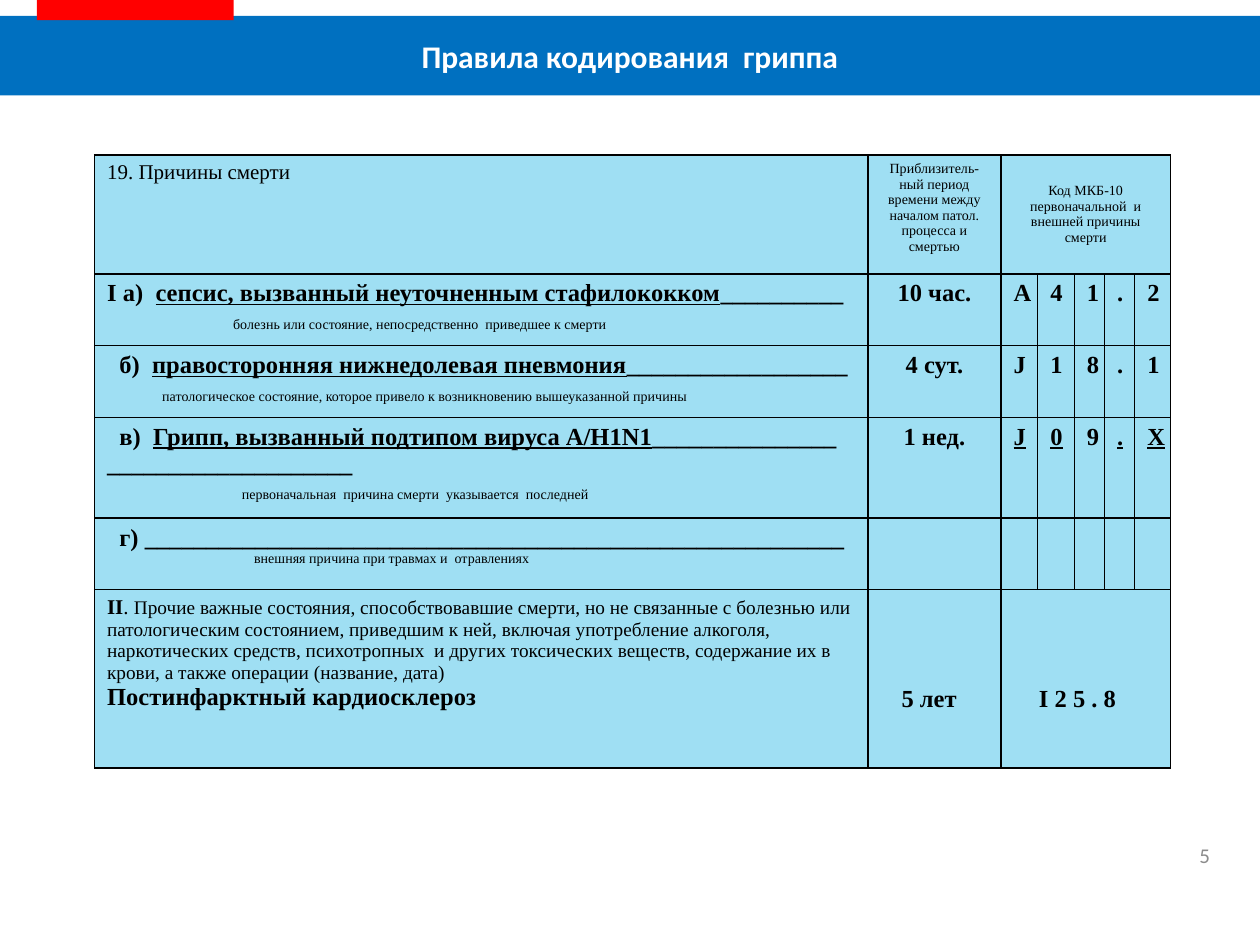
from lxml import etree
from pptx import Presentation
from pptx.dml.color import RGBColor
from pptx.enum.shapes import MSO_SHAPE
from pptx.enum.text import MSO_ANCHOR, MSO_AUTO_SIZE, PP_ALIGN
from pptx.oxml.ns import qn
from pptx.util import Pt

LEFT, CENTER, RIGHT = PP_ALIGN.LEFT, PP_ALIGN.CENTER, PP_ALIGN.RIGHT
TOP, MIDDLE = MSO_ANCHOR.TOP, MSO_ANCHOR.MIDDLE
RECTANGLE = MSO_SHAPE.RECTANGLE
NO_AUTOFIT = MSO_AUTO_SIZE.NONE

COLORS = {"bar": "0070C0", "tab": "FF0000", "cell": "9FDFF3",
          "text": "000000", "title": "FFFFFF", "number": "8C8C8C"}
SERIF, SANS = "Times New Roman", "Calibri"
TITLE = "Правила кодирования  гриппа"
PAGE_NUMBER = "5"

# Table content: a run is (text, size, style), with b for bold and u for underlined
COLUMN_WIDTHS = [442, 76, 21, 21, 17, 17, 20.5]
ROW_HEIGHTS = [68, 41, 41, 57.5, 41, 102]
HEADERS = [
    ([[("19. Причины смерти", 12, "")]], LEFT, TOP),
    ([[("Приблизитель-ный период времени между началом патол. процесса и смертью",
        8, "")]], CENTER, TOP),
    ([[("Код МКБ-10", 8, "")],
      [("первоначальной  и внешней причины смерти", 8, "")]], CENTER, MIDDLE),
]
# Each cause: mark, wording, filling line, first indent, note, note indent,
# space before the note, period, code, underlined places of the code
CAUSES = [
    ("I а)  ", "сепсис, вызванный неуточненным стафилококком", "_" * 10, 0,
     "болезнь или состояние, непосредственно  приведшее к смерти", 72, 5.5,
     "10 час.", "А41.2", ()),
    ("б)  ", "правосторонняя нижнедолевая пневмония", "_" * 18, 7,
     "патологическое состояние, которое привело к возникновению вышеуказанной причины",
     31.5, 5.5, "4 сут.", "J18.1", ()),
    ("в)  ", "Грипп, вызванный подтипом вируса A/H1N1",
     "_" * 15 + " " + "_" * 20, 7,
     "первоначальная  причина смерти  указывается  последней", 77, 5.5,
     "1 нед.", "J09.X", (0, 1, 3, 4)),
    ("г) ", "", "_" * 57, 7,
     "внешняя причина при травмах и  отравлениях", 84, 0, "", "", ()),
]
OTHER_CONDITIONS = [
    [("II", 12, "b"), (". ", 12, ""),
     ("Прочие важные состояния, способствовавшие смерти, но не связанные с болезнью "
      "или патологическим состоянием, приведшим к ней, включая употребление алкоголя, "
      "наркотических средств, психотропных  и других токсических веществ, содержание "
      "их в крови, а также операции (название, дата)", 11, "")],
    [("Постинфарктный кардиосклероз", 14, "b")],
]
OTHER_VALUES = [(1, "5 лет", 12), (2, "I 2 5 . 8", 14.5)]


def set_values(target, values):
    for name, value in values.items():
        setattr(target, name, value)


def add_run(paragraph, text, size, style="", font=SERIF, color="text"):
    run = paragraph.add_run()
    run.text = text
    set_values(run.font, {"name": font, "size": Pt(size), "bold": "b" in style,
                          "underline": "u" in style})
    run.font.color.rgb = RGBColor.from_string(COLORS[color])


def paint(shape, color):
    shape.fill.solid()
    shape.fill.fore_color.rgb = RGBColor.from_string(COLORS[color])
    shape.line.fill.background()


def set_border(cell):
    properties = cell._tc.get_or_add_tcPr()
    for position, side in enumerate(("lnL", "lnR", "lnT", "lnB")):
        line = etree.Element(qn("a:" + side), w=str(Pt(1)))
        fill = etree.SubElement(line, qn("a:solidFill"))
        etree.SubElement(fill, qn("a:srgbClr"), val=COLORS["text"])
        properties.insert(position, line)


def fill_cell(cell, paragraphs, align=LEFT, anchor=TOP):
    cell.vertical_anchor = anchor
    frame = cell.text_frame
    for index, runs in enumerate(paragraphs):
        paragraph = frame.add_paragraph() if index else frame.paragraphs[0]
        paragraph.alignment = align
        for run in runs:
            add_run(paragraph, *run)
    return frame.paragraphs


def indent(paragraph, left=0, first=0):
    properties = paragraph._p.get_or_add_pPr()
    properties.set("marL", str(Pt(left)))
    properties.set("indent", str(Pt(first)))


presentation = Presentation()
set_values(presentation, {"slide_width": Pt(720), "slide_height": Pt(540)})
slide = presentation.slides.add_slide(presentation.slide_layouts[5])

# Title bar
title = slide.shapes.title
set_values(title, {"left": Pt(0), "top": Pt(9), "width": Pt(720), "height": Pt(45.5)})
paint(title, "bar")
set_values(title.text_frame, {"vertical_anchor": MIDDLE, "auto_size": NO_AUTOFIT})
title.text_frame.paragraphs[0].alignment = CENTER
add_run(title.text_frame.paragraphs[0], TITLE, 18, "b", SANS, "title")

# Red tab
tab = slide.shapes.add_shape(RECTANGLE, Pt(21), Pt(0), Pt(112.5), Pt(11.5))
tab.shadow.inherit = False
paint(tab, "tab")

# Page number
number = slide.shapes.add_textbox(Pt(530.5), Pt(474), Pt(168), Pt(28.75))
set_values(number.text_frame, {"vertical_anchor": MIDDLE, "word_wrap": True})
number.text_frame.paragraphs[0].alignment = RIGHT
add_run(number.text_frame.paragraphs[0], PAGE_NUMBER, 12, "", SANS, "number")

# Table grid
table = slide.shapes.add_table(
    len(ROW_HEIGHTS), len(COLUMN_WIDTHS), Pt(54), Pt(88.5),
    Pt(sum(COLUMN_WIDTHS)), Pt(sum(ROW_HEIGHTS))).table
set_values(table, {"first_row": False, "horz_banding": False})
for column, width in zip(table.columns, COLUMN_WIDTHS):
    column.width = Pt(width)
for row, height in zip(table.rows, ROW_HEIGHTS):
    row.height = Pt(height)
for cell in table.iter_cells():
    cell.fill.solid()
    cell.fill.fore_color.rgb = RGBColor.from_string(COLORS["cell"])
    set_border(cell)
last_row = len(ROW_HEIGHTS) - 1
for row_index in (0, last_row):
    table.cell(row_index, 2).merge(table.cell(row_index, 6))

# Header row
for column_index, (paragraphs, align, anchor) in enumerate(HEADERS):
    fill_cell(table.cell(0, column_index), paragraphs, align, anchor)

# Causes of death
for row_index, cause in enumerate(CAUSES, start=1):
    mark, wording, line, first, note, note_left, space, period, code, underlined = cause
    wording_runs = [(wording, 14, "bu")] if wording else []
    main, remark = fill_cell(table.cell(row_index, 0), [
        [(mark, 14, "b"), *wording_runs, (line, 14, "b")], [(note, 8, "")]])
    indent(main, first=first)
    indent(remark, left=note_left)
    remark.space_before = Pt(space)
    if period:
        fill_cell(table.cell(row_index, 1), [[(period, 14, "b")]], CENTER)
    for place, character in enumerate(code):
        cell = table.cell(row_index, 2 + place)
        cell.margin_right = Pt(0)
        fill_cell(cell, [[(character, 14, "bu" if place in underlined else "b")]])

# Other conditions
fill_cell(table.cell(last_row, 0), OTHER_CONDITIONS)
for column_index, text, left in OTHER_VALUES:
    cell = table.cell(last_row, column_index)
    cell.margin_top = Pt(27)
    indent(fill_cell(cell, [[(text, 14, "b")]], LEFT, MIDDLE)[0], left=left)

presentation.save("out.pptx")
